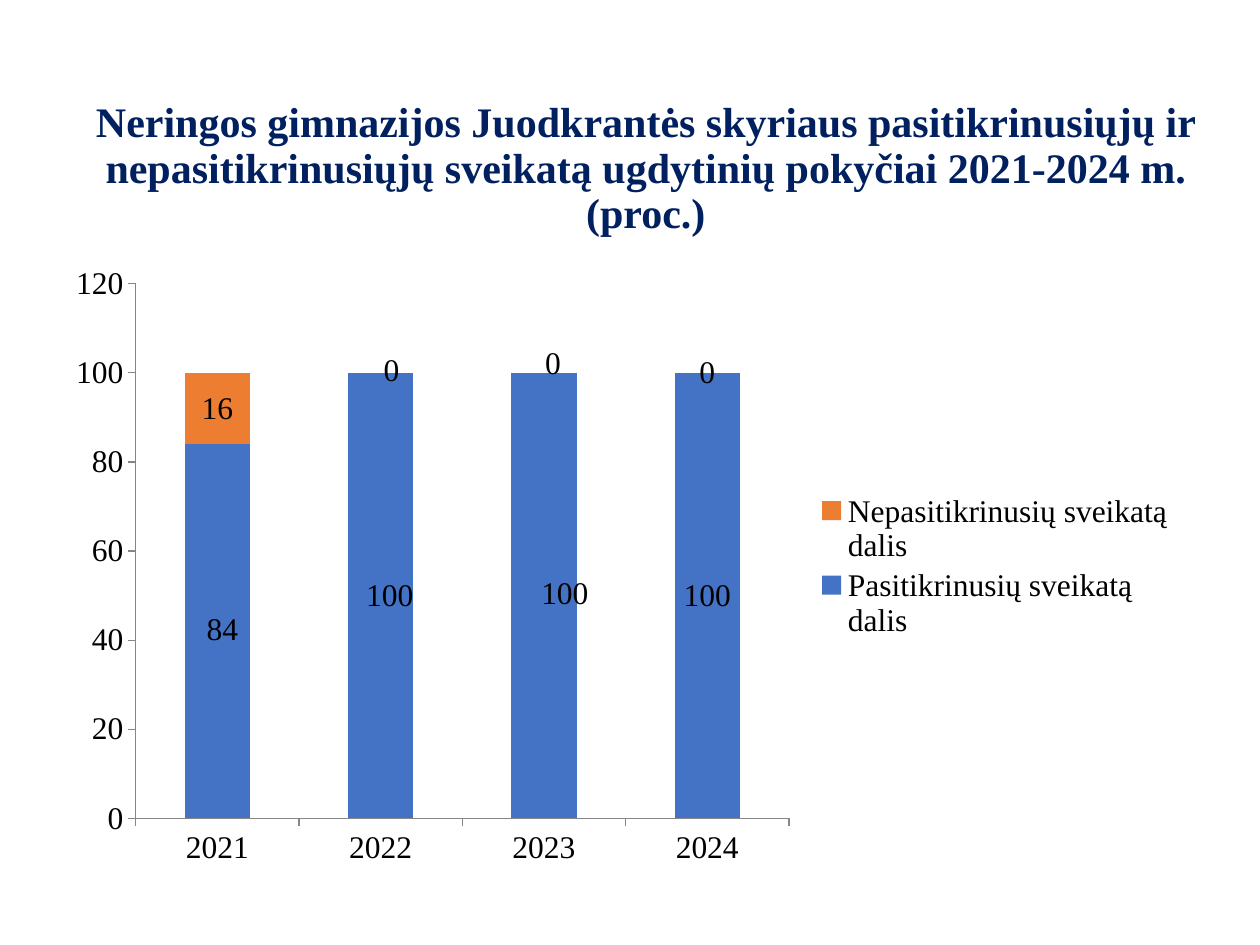
from dataclasses import dataclass, field

import lxml.etree
import pptx
import pptx.chart.data
import pptx.dml.color
import pptx.enum.chart
import pptx.enum.text
import pptx.oxml.ns
import pptx.util

SLIDE_WIDTH = pptx.util.Inches(10)
SLIDE_HEIGHT = pptx.util.Inches(7.5)
FONT = "Times New Roman"
COLORS = {
    "title": "002060",
    "text": "000000",
    "axis": "868686",
    "checked": "4472C4",
    "unchecked": "ED7D31",
}
YEARS = ("2021", "2022", "2023", "2024")
TITLE = (
    "Neringos gimnazijos Juodkrantės skyriaus pasitikrinusiųjų ir "
    "nepasitikrinusiųjų sveikatą ugdytinių pokyčiai 2021-2024 m. (proc.)"
)


@dataclass(frozen=True)
class Area:
    """A rectangle in percent of whatever contains it."""

    left: float
    top: float
    width: float
    height: float

    def on_slide(self) -> tuple[int, int, int, int]:
        return (
            int(SLIDE_WIDTH * self.left / 100),
            int(SLIDE_HEIGHT * self.top / 100),
            int(SLIDE_WIDTH * self.width / 100),
            int(SLIDE_HEIGHT * self.height / 100),
        )


@dataclass(frozen=True)
class PupilShare:
    name: str
    values: tuple[int, ...]
    color: str
    # Year index -> label shift (x, y) in percent of the chart
    label_shifts: dict[int, tuple[float, float]] = field(default_factory=dict)


TITLE_AREA = Area(2.8, 9.6, 96.9, 16.67)
CHART_AREA = Area(4.3, 26.93, 90, 66)
PLOT_AREA = Area(7.2, 4.7, 57.6, 85.75)
SHARES = (
    PupilShare("Pasitikrinusių sveikatą dalis", (84, 100, 100, 100), "checked",
               {0: (0.45, -0.2), 1: (0.8, 0), 2: (1.85, -0.3)}),
    PupilShare("Nepasitikrinusių sveikatą dalis", (16, 0, 0, 0), "unchecked",
               {1: (0.95, -0.3), 2: (0.8, -1.45)}),
)


def rgb(name: str) -> pptx.dml.color.RGBColor:
    return pptx.dml.color.RGBColor.from_string(COLORS[name])


def style_font(font, size: float, color: str, bold: bool = False) -> None:
    font.name = FONT
    font.size = pptx.util.Pt(size)
    font.bold = bold
    font.color.rgb = rgb(color)


def manual_layout(**settings):
    """Build a c:layout element from the manual layout settings."""
    tag = pptx.oxml.ns.qn
    layout = lxml.etree.Element(tag("c:layout"))
    manual = lxml.etree.SubElement(layout, tag("c:manualLayout"))
    for key, value in settings.items():
        lxml.etree.SubElement(manual, tag(f"c:{key}")).set("val", str(value))
    return layout


def add_title(slide) -> None:
    frame = slide.shapes.add_textbox(*TITLE_AREA.on_slide()).text_frame
    frame.word_wrap = True
    frame.vertical_anchor = pptx.enum.text.MSO_ANCHOR.MIDDLE
    paragraph = frame.paragraphs[0]
    paragraph.alignment = pptx.enum.text.PP_ALIGN.CENTER
    paragraph.line_spacing = 0.9
    run = paragraph.add_run()
    run.text = TITLE
    style_font(run.font, 24, "title", bold=True)


def style_series(series, share: PupilShare) -> None:
    series.format.fill.solid()
    series.format.fill.fore_color.rgb = rgb(share.color)
    series.invert_if_negative = False
    labels = series.data_labels
    labels.show_value = True
    style_font(labels.font, 18, "text")
    for index, (x, y) in share.label_shifts.items():
        label = series.points[index].data_label
        style_font(label.font, 18, "text")
        (element,) = series._element.xpath(f"c:dLbls/c:dLbl[c:idx/@val='{index}']")
        element.insert(1, manual_layout(x=x / 100, y=y / 100))


def place_plot(chart) -> None:
    (plot_area,) = chart._chartSpace.xpath("c:chart/c:plotArea")
    for automatic in plot_area.xpath("c:layout"):
        plot_area.remove(automatic)
    plot_area.insert(0, manual_layout(
        layoutTarget="inner", xMode="edge", yMode="edge",
        x=PLOT_AREA.left / 100, y=PLOT_AREA.top / 100,
        w=PLOT_AREA.width / 100, h=PLOT_AREA.height / 100))


def add_share_chart(slide) -> None:
    data = pptx.chart.data.CategoryChartData()
    data.categories = YEARS
    for share in SHARES:
        data.add_series(share.name, share.values)
    chart = slide.shapes.add_chart(
        pptx.enum.chart.XL_CHART_TYPE.COLUMN_STACKED,
        *CHART_AREA.on_slide(), data).chart
    chart.has_title = False
    style_font(chart.font, 18, "text")

    plot = chart.plots[0]
    plot.gap_width = 150
    plot.overlap = 100
    plot.vary_by_categories = False
    for series, share in zip(plot.series, SHARES):
        style_series(series, share)

    for axis in (chart.category_axis, chart.value_axis):
        axis.has_major_gridlines = False
        axis.major_tick_mark = pptx.enum.chart.XL_TICK_MARK.OUTSIDE
        axis.format.line.color.rgb = rgb("axis")
        axis.format.line.width = pptx.util.Pt(0.75)
        style_font(axis.tick_labels.font, 18, "text")
    chart.value_axis.minimum_scale = 0
    chart.value_axis.maximum_scale = 120
    chart.value_axis.major_unit = 20

    chart.has_legend = True
    chart.legend.position = pptx.enum.chart.XL_LEGEND_POSITION.RIGHT
    chart.legend.include_in_layout = False
    style_font(chart.legend.font, 18, "text")
    place_plot(chart)


def main() -> None:
    presentation = pptx.Presentation()
    presentation.slide_width = SLIDE_WIDTH
    presentation.slide_height = SLIDE_HEIGHT
    slide = presentation.slides.add_slide(presentation.slide_layouts[6])
    add_title(slide)
    add_share_chart(slide)
    presentation.save("out.pptx")


if __name__ == "__main__":
    main()
